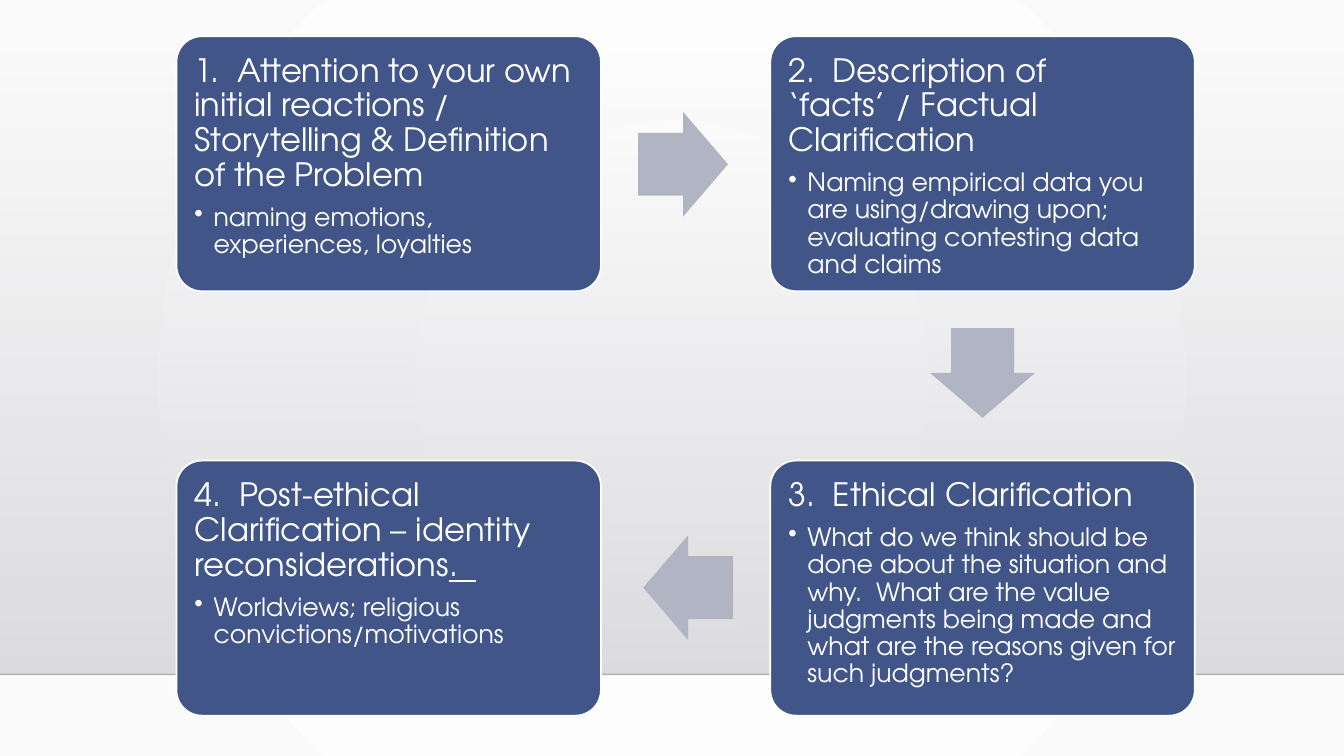
from lxml import etree
from pptx import Presentation, util as u
from pptx.dml.color import RGBColor
from pptx.enum import shapes, text
from pptx.oxml import parse_xml
from pptx.oxml.ns import nsdecls, qn

NAVY = RGBColor(0x41, 0x55, 0x88)
GREY = RGBColor(0xB0, 0xB4, 0xC3)
WHITE = RGBColor(0xFF, 0xFF, 0xFF)
PALE = RGBColor(0xFA, 0xFA, 0xFA)
MIST = RGBColor(0xDC, 0xDC, 0xE0)
HAZE = RGBColor(0xDE, 0xDE, 0xE2)
BLACK = RGBColor(0x00, 0x00, 0x01)

WIDE, HIGH = 13.33, 7.5
FLOOR = 6.69
BOX_W, BOX_H, PAD = 4.21, 2.53, 0.08
LEFT, RIGHT = 1.75, 7.64
TOP, LOW = 0.36, 4.57

STEPS = [
    (LEFT, TOP,
     ["1.  Attention to your own initial reactions / Storytelling & Definition of the Problem"],
     "naming emotions, experiences, loyalties"),
    (RIGHT, TOP,
     ["2.  Description of ‘facts’ / Factual Clarification"],
     "Naming empirical data you are using/drawing upon; evaluating contesting data and claims"),
    (RIGHT, LOW,
     ["3.  Ethical Clarification"],
     "What do we think should be done about the situation and why.  What are the value "
     "judgments being made and what are the reasons given for such judgments?"),
    (LEFT, LOW,
     ["4.  Post-ethical Clarification – identity reconsiderations", ".  "],
     "Worldviews; religious convictions/motivations"),
]
ARROWS = [(6.33, 1.11, 0), (9.3, 3.18, 90), (6.38, 5.31, 180)]


def add_tag(parent, tag, **attrs):
    return etree.SubElement(parent, qn(tag), attrs)


def blend(fill, owner, stops, path=False):
    """Give the owner a gradient of (colour, alpha) stops, downward or from the centre."""
    fill.gradient()
    grad = owner.find(".//" + qn("a:gradFill"))
    for child in list(grad):
        grad.remove(child)
    ramp = add_tag(grad, "a:gsLst")
    for spot, (colour, alpha) in zip(("0", "100000"), stops):
        stop = add_tag(ramp, "a:gs", pos=spot)
        tint = add_tag(stop, "a:srgbClr", val=str(colour))
        add_tag(tint, "a:alpha", val=str(alpha * 1000))
    if path:
        ring = add_tag(grad, "a:path", path="circle")
        add_tag(ring, "a:fillToRect", **dict.fromkeys("ltrb", "50000"))
    else:
        add_tag(grad, "a:lin", ang="5400000", scaled="0")


def write(para, runs, size, after, bullet=False):
    """Fill a paragraph; any run past the first is underlined."""
    para.line_spacing = 0.9
    props = para._p.get_or_add_pPr()
    gap = add_tag(props, "a:spcAft")
    add_tag(gap, "a:spcPct", val=str(after * 1000))
    if bullet:
        para.level = 1
        inset = u.Inches(0.19)
        props.set("marL", str(inset))
        props.set("indent", str(-inset))
        add_tag(props, "a:buChar", char="•")
    for order, words in enumerate(runs):
        run = para.add_run()
        run.text = words
        font = run.font
        font.name, font.size = Deck.font, u.Pt(size)
        font.color.rgb = WHITE
        if order:
            font.underline = True


class Deck:
    font = "TeX Gyre Adventor"

    def __init__(self):
        self.show = Presentation()
        self.show.slide_width, self.show.slide_height = u.Inches(WIDE), u.Inches(HIGH)
        self.slide = self.show.slides.add_slide(self.show.slide_layouts[6])
        self.items = self.slide.shapes

    def shape(self, kind, x, y, w, h, colour=None):
        item = self.items.add_shape(kind, *map(u.Inches, (x, y, w, h)))
        item.shadow.inherit = False
        item.line.fill.background()
        if colour is not None:
            item.fill.solid()
            item.fill.fore_color.rgb = colour
        return item

    def backdrop(self):
        blend(self.slide.background.fill, self.slide._element,
              [(WHITE, 100), (PALE, 100)], path=True)
        wall = self.shape(shapes.MSO_SHAPE.RECTANGLE, 0, 0.51, WIDE, FLOOR - 0.51)
        blend(wall.fill, wall._element, [(MIST, 0), (HAZE, 100)])
        edge = self.items.add_connector(
            shapes.MSO_CONNECTOR.STRAIGHT, *map(u.Inches, (0, FLOOR, WIDE, FLOOR)))
        edge.line.color.rgb = BLACK
        edge.line.width = u.Pt(1)
        tint = edge._element.find(".//" + qn("a:srgbClr"))
        add_tag(tint, "a:alpha", val="20000")
        edge._element.spPr.append(parse_xml(f"<a:effectLst {nsdecls('a')}/>"))

    def card(self, x, y, title, point):
        box = self.shape(shapes.MSO_SHAPE.ROUNDED_RECTANGLE, x, y, BOX_W, BOX_H, NAVY)
        box.adjustments[0] = 0.1
        box.line.color.rgb = WHITE
        box.line.width = u.Pt(1.25)
        label = self.items.add_textbox(*map(
            u.Inches, (x + PAD, y + PAD, BOX_W - 2 * PAD, BOX_H - 2 * PAD)))
        frame = label.text_frame
        frame.word_wrap = True
        frame.vertical_anchor = text.MSO_ANCHOR.TOP
        for side in ("left", "top", "right", "bottom"):
            setattr(frame, "margin_" + side, u.Inches(0.1))
        write(frame.paragraphs[0], title, size=23, after=35)
        write(frame.add_paragraph(), [point], size=18, after=15, bullet=True)

    def arrow(self, x, y, turn):
        item = self.shape(shapes.MSO_SHAPE.RIGHT_ARROW, x, y, 0.89, 1.04, GREY)
        item.adjustments[0], item.adjustments[1] = 0.6, 0.5
        item.rotation = turn


def main():
    deck = Deck()
    deck.backdrop()
    for step in STEPS:
        deck.card(*step)
    for place in ARROWS:
        deck.arrow(*place)
    deck.show.save("out.pptx")


if __name__ == "__main__":
    main()
